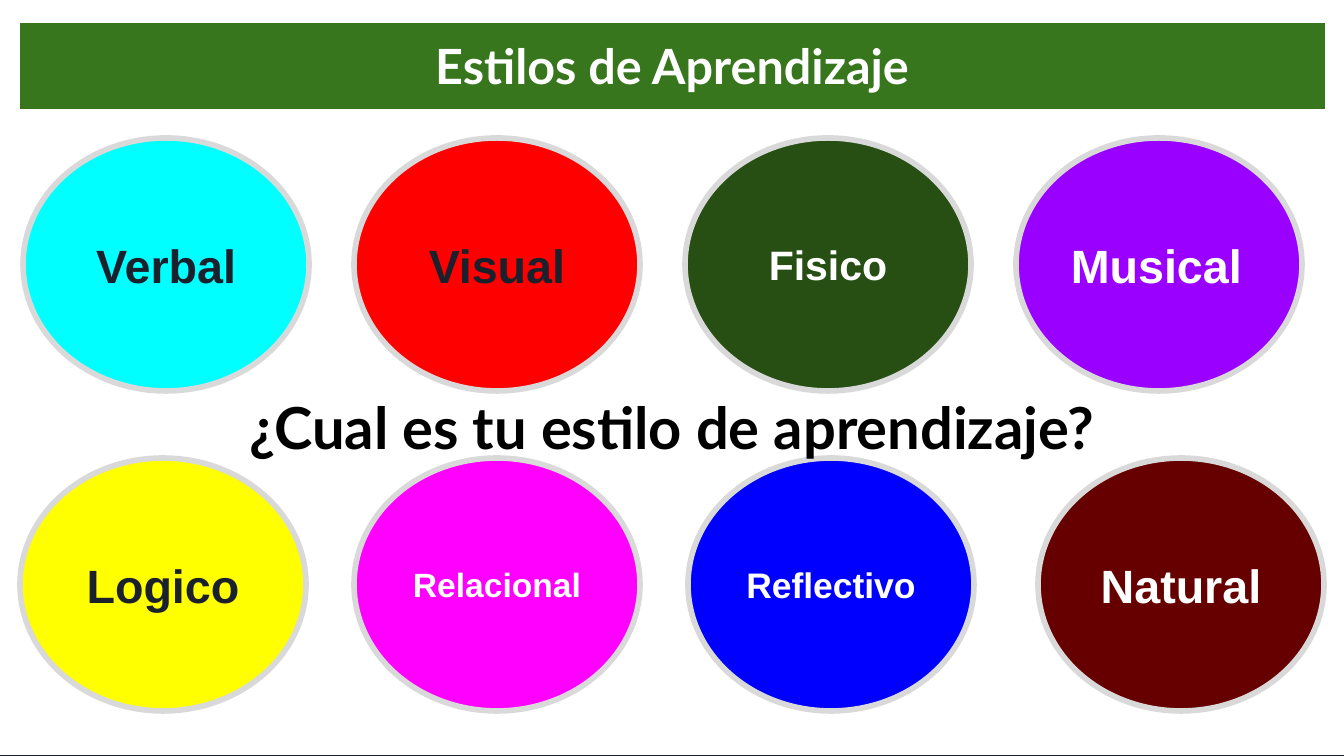
import pptx
import pptx.util
import pptx.dml.color
import pptx.enum.shapes
import pptx.enum.text

SHAPE = pptx.enum.shapes.MSO_SHAPE
ALIGN = pptx.enum.text.PP_ALIGN
ANCHOR = pptx.enum.text.MSO_ANCHOR

THEME = {
    "dark": "1B212C", "white": "FFFFFF", "black": "000000",
    "banner": "38761D", "ring": "D9D9D9",
    "heading_font": "Lato", "label_font": "Arial",
    "title": 26, "question": 31,
    "large": 25, "medium": 22, "small": 19, "tiny": 18,
    "ring_width": 3,
}

TITLE = "Estilos de Aprendizaje"
QUESTION = "¿Cual es tu estilo de aprendizaje?"
# Each row: top, lefts, styles (label, fill, text colour, text size, alignment)
ROWS = [
    (138, [23 + 331 * column for column in range(4)], [
        ("Verbal", "00FFFF", "dark", "large", ALIGN.CENTER),
        ("Visual", "FF0000", "dark", "large", ALIGN.CENTER),
        ("Fisico", "274E13", "white", "medium", ALIGN.CENTER),
        ("Musical", "9900FF", "white", "large", ALIGN.LEFT),
    ]),
    (458, [20, 354, 688, 1038], [
        ("Logico", "FFFF00", "dark", "large", ALIGN.CENTER),
        ("Relacional", "FF00FF", "white", "tiny", ALIGN.CENTER),
        ("Reflectivo", "0000FF", "white", "small", ALIGN.CENTER),
        ("Natural", "660000", "white", "large", ALIGN.CENTER),
    ]),
]
SLIDE_WIDTH, SLIDE_HEIGHT = 1344, 756
OVAL_WIDTH, OVAL_HEIGHT = 286, 253
INSET = 13


def px(length):
    return round(length * 914400 / 134.4)


def colour(value):
    return pptx.dml.color.RGBColor.from_string(value)


def paint(shape, value):
    shape.fill.solid()
    shape.fill.fore_color.rgb = colour(value)


def add_filled(page, kind, area, value):
    shape = page.shapes.add_shape(kind, *map(px, area))
    shape.shadow.inherit = False
    paint(shape, value)
    shape.line.fill.background()
    return shape


def write(shape, text, font, size, text_colour, align=ALIGN.CENTER, anchor=ANCHOR.TOP):
    """Put one bold paragraph in the shape."""
    frame = shape.text_frame
    frame.word_wrap = True
    frame.auto_size = pptx.enum.text.MSO_AUTO_SIZE.NONE
    frame.vertical_anchor = anchor
    frame.margin_left = frame.margin_right = px(INSET)
    frame.margin_top = frame.margin_bottom = px(INSET)
    para = frame.paragraphs[0]
    para.text = text
    para.alignment = align
    para.font.name = THEME[font]
    para.font.size = pptx.util.Pt(THEME[size])
    para.font.bold = True
    para.font.color.rgb = colour(THEME[text_colour])


def add_banner(page):
    banner = page.shapes.title
    banner.left, banner.top, banner.width, banner.height = map(px, (20, 23, 1305, 86))
    paint(banner, THEME["banner"])
    write(banner, TITLE, "heading_font", "title", "white")
    # Bring the title in front of the white panel
    banner.element.getparent().append(banner.element)


def add_styles(page):
    for top, lefts, styles in ROWS:
        for left, (label, fill, text_colour, size, align) in zip(lefts, styles):
            oval = add_filled(page, SHAPE.OVAL, (left, top, OVAL_WIDTH, OVAL_HEIGHT), fill)
            oval.line.color.rgb = colour(THEME["ring"])
            oval.line.width = pptx.util.Pt(THEME["ring_width"])
            write(oval, label, "label_font", size, text_colour, align, ANCHOR.MIDDLE)


def main():
    deck = pptx.Presentation()
    deck.slide_width, deck.slide_height = px(SLIDE_WIDTH), px(SLIDE_HEIGHT)
    page = deck.slides.add_slide(deck.slide_layouts.get_by_name("Title Only"))
    paint(page.background, THEME["dark"])
    add_filled(page, SHAPE.RECTANGLE, (0, 0, SLIDE_WIDTH, SLIDE_HEIGHT - 1), THEME["white"])
    add_banner(page)
    add_styles(page)
    question = page.shapes.add_textbox(*map(px, (0, 379, SLIDE_WIDTH, 97)))
    write(question, QUESTION, "heading_font", "question", "black")
    deck.save("out.pptx")


if __name__ == "__main__":
    main()
